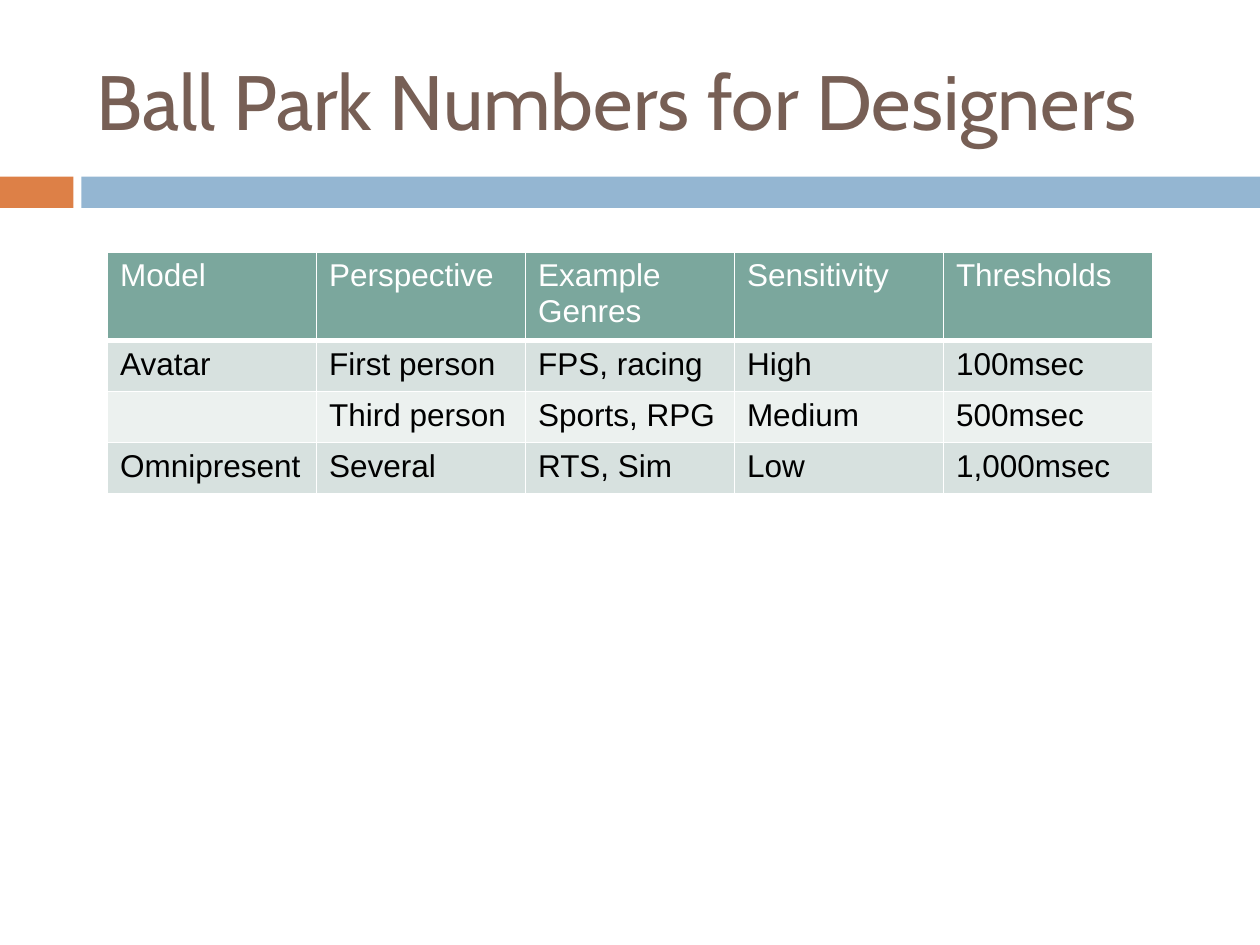
from dataclasses import dataclass

from lxml.etree import SubElement
from pptx import Presentation
from pptx.dml.color import RGBColor
from pptx.enum.shapes import MSO_SHAPE as Shape
from pptx.enum.text import MSO_ANCHOR as Anchor
from pptx.oxml.ns import qn
from pptx.slide import Slide
from pptx.util import Cm, Pt

COLORS = {
    "title": "775F55",
    "accent": "DD8047",
    "band": "94B6D2",
    "header": "7BA79D",
    "odd_row": "D7E1DF",
    "even_row": "ECF1EF",
    "white": "FFFFFF",
    "black": "000000",
}

LATENCY_ROWS = [
    ["Model", "Perspective", "Example Genres", "Sensitivity", "Thresholds"],
    ["Avatar", "First person", "FPS, racing", "High", "100msec"],
    ["", "Third person", "Sports, RPG", "Medium", "500msec"],
    ["Omnipresent", "Several", "RTS, Sim", "Low", "1,000msec"],
]


@dataclass
class SlideBuilder:
    """Draws styled elements on the current slide."""

    slide: Slide
    title_font: str = "Cabin"
    body_font: str = "Arial"
    title_size: int = 44
    body_size: int = 18

    def color(self, key):
        return RGBColor.from_string(COLORS[key])

    def add_text(self, paragraph, text, font, size, color):
        run = paragraph.add_run()
        run.text = text
        run.font.name = font
        run.font.size = Pt(size)
        run.font.bold = False
        run.font.color.rgb = self.color(color)

    def bar(self, left, top, width, height, color):
        bar = self.slide.shapes.add_shape(
            Shape.RECTANGLE, Cm(left), Cm(top), Cm(width), Cm(height))
        bar.shadow.inherit = False
        bar.fill.solid()
        bar.fill.fore_color.rgb = self.color(color)
        bar.line.fill.background()

    def title(self, left, top, width, height, text):
        frame = self.slide.shapes.add_textbox(
            Cm(left), Cm(top), Cm(width), Cm(height)).text_frame
        frame.word_wrap = True
        frame.vertical_anchor = Anchor.MIDDLE
        self.add_text(frame.paragraphs[0], text,
                      self.title_font, self.title_size, "title")

    def borders(self, cell, bottom):
        properties = cell._tc.get_or_add_tcPr()
        for side, points in {"L": 1, "R": 1, "T": 1, "B": bottom}.items():
            line = SubElement(properties, qn(f"a:ln{side}"), w=str(Pt(points)))
            fill = SubElement(line, qn("a:solidFill"))
            SubElement(fill, qn("a:srgbClr"), val=COLORS["white"])

    def table(self, left, top, width, row_height, rows):
        table = self.slide.shapes.add_table(
            len(rows), len(rows[0]), Cm(left), Cm(top),
            Cm(width), Cm(row_height * len(rows))).table
        for index, texts in enumerate(rows):
            is_header = index == 0
            fill = "header" if is_header else "odd_row" if index % 2 else "even_row"
            for column, text in enumerate(texts):
                cell = table.cell(index, column)
                self.borders(cell, bottom=3 if is_header else 1)
                cell.fill.solid()
                cell.fill.fore_color.rgb = self.color(fill)
                if text:
                    self.add_text(cell.text_frame.paragraphs[0], text,
                                  self.body_font, self.body_size,
                                  "white" if is_header else "black")


def main():
    deck = Presentation()
    deck.slide_width, deck.slide_height = Cm(25.4), Cm(19.05)
    builder = SlideBuilder(deck.slides.add_slide(deck.slide_layouts[6]))
    builder.bar(0, 3.56, 1.48, 0.63, "accent")
    builder.bar(1.64, 3.56, 23.76, 0.63, "band")
    builder.title(1.7, 0.64, 22.66, 2.74, "Ball Park Numbers for Designers")
    builder.table(2.17, 5.08, 21.06, 1.03, LATENCY_ROWS)
    deck.save("out.pptx")


if __name__ == "__main__":
    main()
